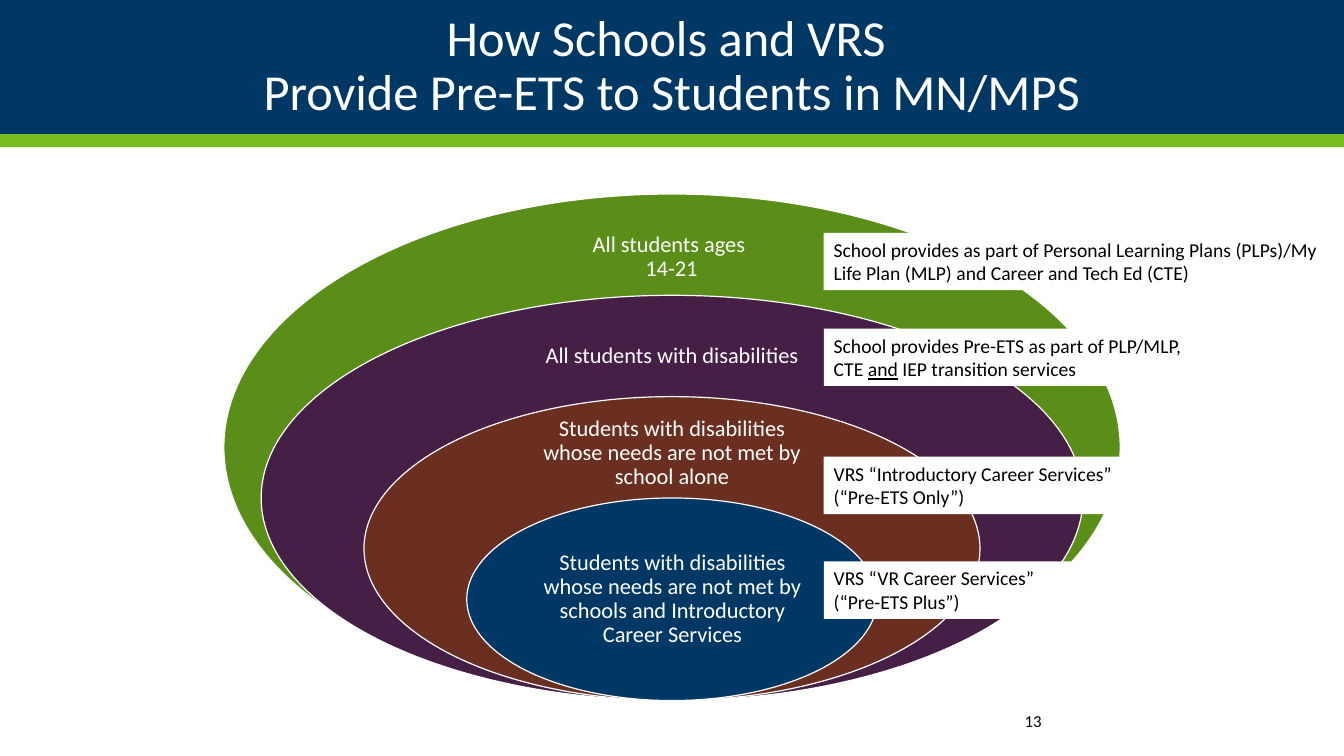
from dataclasses import dataclass
from typing import Any, Optional

from pptx import Presentation
from pptx.dml.color import RGBColor
from pptx.enum.shapes import MSO_SHAPE
from pptx.enum.text import MSO_ANCHOR, PP_ALIGN
from pptx.util import Inches, Pt


@dataclass(frozen=True)
class Theme:
    """Colours, font and type sizes of the slide."""
    navy: str = "003865"
    lime: str = "78BE21"
    green: str = "5A8E19"
    purple: str = "461F47"
    brown: str = "6A2F20"
    white: str = "FFFFFF"
    black: str = "000000"
    font: str = "Calibri"
    title_size: float = 36
    ring_size: float = 16
    note_size: float = 14
    number_size: float = 12


@dataclass(frozen=True)
class Area:
    """A rectangle on the slide, in inches."""
    left: float
    top: float
    width: float
    height: float


@dataclass(frozen=True)
class TextStyle:
    """How the text of one box is set."""
    size: float
    color: str
    align: PP_ALIGN = PP_ALIGN.LEFT
    anchor: MSO_ANCHOR = MSO_ANCHOR.TOP
    spacing: float = 1.0
    side_margin: float = 0.1
    end_margin: float = 0.05


@dataclass(frozen=True)
class Ring:
    """One nested ellipse with its label."""
    width: float
    height: float
    color: str
    label: str
    label_area: Area


@dataclass(frozen=True)
class Note:
    """A white note; underscores enclose underlined words."""
    top: float
    width: float
    text: str


THEME = Theme()
SLIDE_WIDTH, SLIDE_HEIGHT = 13.33, 7.5
RING_BOTTOM = 6.95
RING_STEP = 1.005
NOTE_LEFT, NOTE_HEIGHT = 8.17, 0.57

TITLE_STYLE = TextStyle(THEME.title_size, THEME.white, PP_ALIGN.CENTER, MSO_ANCHOR.MIDDLE, 0.9, 0.9)
RING_STYLE = TextStyle(THEME.ring_size, THEME.white, PP_ALIGN.CENTER, MSO_ANCHOR.MIDDLE, 0.9, 0.12, 0.12)
NOTE_STYLE = TextStyle(THEME.note_size, THEME.black)
NUMBER_STYLE = TextStyle(THEME.number_size, THEME.black, PP_ALIGN.RIGHT, MSO_ANCHOR.MIDDLE)

RINGS = [
    Ring(8.89, 5 * RING_STEP, THEME.green, "All students ages \n14-21",
         Area(5.42, 2.18, 2.48, 0.75)),
    Ring(8.15, 4 * RING_STEP, THEME.purple, "All students with disabilities",
         Area(5.24, 3.17, 2.85, 0.72)),
    Ring(6.11, 3 * RING_STEP, THEME.brown,
         "Students with disabilities whose needs are not met by school alone",
         Area(5.24, 4.16, 2.85, 0.68)),
    Ring(4.07, 2 * RING_STEP, THEME.navy,
         "Students with disabilities whose needs are not met by schools and "
         "Introductory Career Services",
         Area(5.23, 5.44, 2.88, 1.01)),
]

NOTES = [
    Note(5.57, 2.95, "VRS “VR Career Services”\n(“Pre-ETS Plus”)"),
    Note(4.53, 3.07, "VRS “Introductory Career Services” (“Pre-ETS Only”)"),
    Note(3.26, 3.69,
         "School provides Pre-ETS as part of PLP/MLP, CTE _and_ IEP transition services"),
    Note(2.31, 5.06,
         "School provides as part of Personal Learning Plans (PLPs)/My Life Plan (MLP) "
         "and Career and Tech Ed (CTE)"),
]


def apply_format(target: Any, values: dict[str, Any]) -> None:
    """Set each named attribute on the target."""
    for name, value in values.items():
        setattr(target, name, value)


def place(area: Area) -> tuple[Inches, Inches, Inches, Inches]:
    """Turn an area into slide lengths."""
    return Inches(area.left), Inches(area.top), Inches(area.width), Inches(area.height)


def write_text(box: Any, text: str, style: TextStyle) -> None:
    """Write one paragraph per line, underlining the marked words."""
    frame = box.text_frame
    apply_format(frame, {
        "word_wrap": True,
        "vertical_anchor": style.anchor,
        "margin_left": Inches(style.side_margin),
        "margin_right": Inches(style.side_margin),
        "margin_top": Inches(style.end_margin),
        "margin_bottom": Inches(style.end_margin),
    })
    for index, line in enumerate(text.split("\n")):
        para = frame.add_paragraph() if index else frame.paragraphs[0]
        apply_format(para, {"alignment": style.align, "line_spacing": style.spacing})
        for position, words in enumerate(line.split("_")):
            span = para.add_run()
            span.text = words
            apply_format(span.font, {"name": THEME.font, "size": Pt(style.size)})
            span.font.color.rgb = RGBColor.from_string(style.color)
            if position % 2:
                span.font.underline = True


def add_figure(page: Any, kind: MSO_SHAPE, area: Area, fill: str,
               outline: Optional[str] = None) -> Any:
    """Add a flat filled shape with an optional thin outline."""
    shape = page.shapes.add_shape(kind, *place(area))
    shape.shadow.inherit = False
    shape.fill.solid()
    shape.fill.fore_color.rgb = RGBColor.from_string(fill)
    if outline:
        shape.line.color.rgb = RGBColor.from_string(outline)
        shape.line.width = Pt(0.85)
    else:
        shape.line.fill.background()
    return shape


def add_label(page: Any, area: Area, text: str, style: TextStyle) -> None:
    """Add a text box."""
    write_text(page.shapes.add_textbox(*place(area)), text, style)


def add_ring(page: Any, ring: Ring) -> None:
    """Add a centred ellipse resting on the common bottom, with its label."""
    area = Area((SLIDE_WIDTH - ring.width) / 2, RING_BOTTOM - ring.height, ring.width, ring.height)
    add_figure(page, MSO_SHAPE.OVAL, area, ring.color, THEME.white)
    add_label(page, ring.label_area, ring.label, RING_STYLE)


def add_note(page: Any, note: Note) -> None:
    """Add a white note in the right-hand column."""
    area = Area(NOTE_LEFT, note.top, note.width, NOTE_HEIGHT)
    box = add_figure(page, MSO_SHAPE.RECTANGLE, area, THEME.white)
    write_text(box, note.text, NOTE_STYLE)


def main() -> None:
    """Build the slide and save it."""
    deck = Presentation()
    apply_format(deck, {"slide_width": Inches(SLIDE_WIDTH), "slide_height": Inches(SLIDE_HEIGHT)})
    page = deck.slides.add_slide(deck.slide_layouts[6])
    add_figure(page, MSO_SHAPE.RECTANGLE, Area(0, 1.33, SLIDE_WIDTH, 0.13), THEME.lime)
    banner = add_figure(page, MSO_SHAPE.RECTANGLE, Area(0, 0, SLIDE_WIDTH, 1.33), THEME.navy)
    write_text(banner, "How Schools and VRS \nProvide Pre-ETS to Students in MN/MPS", TITLE_STYLE)
    add_label(page, Area(8.83, 6.95, 1.6, 0.4), "13", NUMBER_STYLE)
    for ring in RINGS:
        add_ring(page, ring)
    for note in NOTES:
        add_note(page, note)
    deck.save("out.pptx")


if __name__ == "__main__":
    main()
